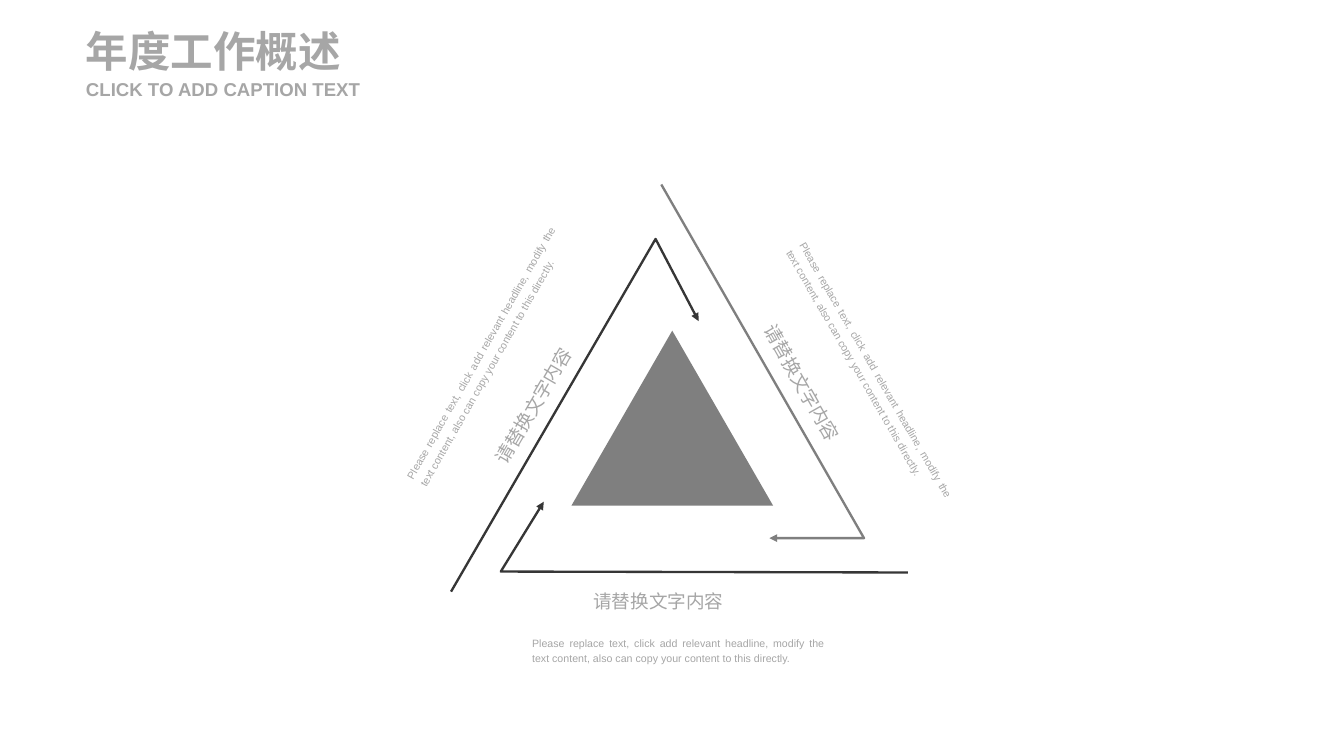
from lxml import etree
from pptx import Presentation
from pptx.dml.color import RGBColor
from pptx.enum.shapes import MSO_SHAPE
from pptx.enum.text import MSO_ANCHOR, MSO_AUTO_SIZE, PP_ALIGN
from pptx.oxml.ns import qn
from pptx.util import Pt

TRIANGLE = MSO_SHAPE.ISOSCELES_TRIANGLE
TOP, MIDDLE = MSO_ANCHOR.TOP, MSO_ANCHOR.MIDDLE
LEFT, CENTER, JUSTIFY = PP_ALIGN.LEFT, PP_ALIGN.CENTER, PP_ALIGN.JUSTIFY
FIT_SHAPE = MSO_AUTO_SIZE.SHAPE_TO_FIT_TEXT

DARK_GRAY = RGBColor(0x36, 0x36, 0x36)
MID_GRAY = RGBColor(0x7F, 0x7F, 0x7F)
TEXT_GRAY = RGBColor(0xA6, 0xA6, 0xA6)

HEADLINE = "请替换文字内容"
BODY = (
    "Please replace text, click add relevant headline, modify the "
    "text content, also can copy your content to this directly."
)
LABEL_HEIGHT = 29.5

SIDES = [
    {
        "color": DARK_GRAY,
        "points": [(684, 431.3), (377.3, 430.6), (409.7, 378)],
        "headline": (359.3, 437, 273.6, 0),
        "body": (393.8, 474.5, 234.7, 0),
    },
    {
        "color": MID_GRAY,
        "points": [(498.2, 139), (650.9, 405.4), (579.6, 405.4)],
        "headline": (483.8, 272.9, 242.6, 60.4),
        "body": (538.6, 266.4, 234.7, 60),
    },
    {
        "color": DARK_GRAY,
        "points": [(339.8, 445.7), (493.9, 180), (526.3, 241.9)],
        "headline": (284.4, 290.2, 232.6, 300.2),
        "body": (250.6, 253.4, 231.1, 299.7),
    },
]


class SlideBuilder:
    def __init__(self, slide, font_name, text_color, line_width):
        self.slide = slide
        self.font_name = font_name
        self.text_color = text_color
        self.line_width = line_width

    def triangle(self, left, top, width, height, color):
        shape = self.slide.shapes.add_shape(
            TRIANGLE, Pt(left), Pt(top), Pt(width), Pt(height)
        )
        shape.shadow.inherit = False
        shape.fill.solid()
        shape.fill.fore_color.rgb = color
        shape.line.fill.background()

    def bent_arrow(self, shapes, points, color):
        start, *rest = [(Pt(x), Pt(y)) for x, y in points]
        builder = shapes.build_freeform(*start)
        builder.add_line_segments(rest, close=False)
        shape = builder.convert_to_shape()
        shape.shadow.inherit = False
        shape.fill.background()
        shape.line.color.rgb = color
        shape.line.width = Pt(self.line_width)
        line = shape.line._get_or_add_ln()
        etree.SubElement(line, qn("a:tailEnd"), type="triangle")

    def text(self, shapes, text, box, size, insets, align=LEFT,
             anchor=TOP, spacing=1, bold=False, rotation=0):
        shape = shapes.add_textbox(*[Pt(length) for length in box])
        shape.rotation = rotation
        frame = shape.text_frame
        frame.word_wrap = True
        frame.auto_size = FIT_SHAPE
        frame.vertical_anchor = anchor
        frame.margin_left = frame.margin_right = Pt(insets[0])
        frame.margin_top = frame.margin_bottom = Pt(insets[1])
        frame.text = text
        paragraph = frame.paragraphs[0]
        paragraph.alignment = align
        paragraph.line_spacing = spacing
        font = paragraph.runs[0].font
        font.name = self.font_name
        font.size = Pt(size)
        font.bold = bold
        font.color.rgb = self.text_color

    def title(self, text, top, height, size):
        self.text(self.slide.shapes, text, (64.8, top, 221, height), size,
                  (0, 0), anchor=MIDDLE, bold=True)

    def side(self, color, points, headline, body):
        shapes = self.slide.shapes.add_group_shape().shapes
        self.bent_arrow(shapes, points, color)
        labels = [
            (HEADLINE, headline, 14, (8.64, 4.32), CENTER),
            (BODY, body, 8, (7.2, 3.6), JUSTIFY),
        ]
        for text, (left, top, width, rotation), size, insets, align in labels:
            self.text(shapes, text, (left, top, width, LABEL_HEIGHT), size,
                      insets, align, spacing=1.2, rotation=rotation)


def main():
    presentation = Presentation()
    presentation.slide_width = Pt(1012.5)
    presentation.slide_height = Pt(569.5)
    slide = presentation.slides.add_slide(presentation.slide_layouts[6])
    builder = SlideBuilder(slide, "Arial", TEXT_GRAY, 1.75)

    builder.triangle(430.5, 249.1, 151.9, 131.8, MID_GRAY)
    for side in SIDES:
        builder.side(**side)
    builder.title("年度工作概述", 18.7, 38.9, 32)
    builder.title("CLICK TO ADD CAPTION TEXT", 58.3, 17.3, 14)

    presentation.save("out.pptx")


if __name__ == "__main__":
    main()
